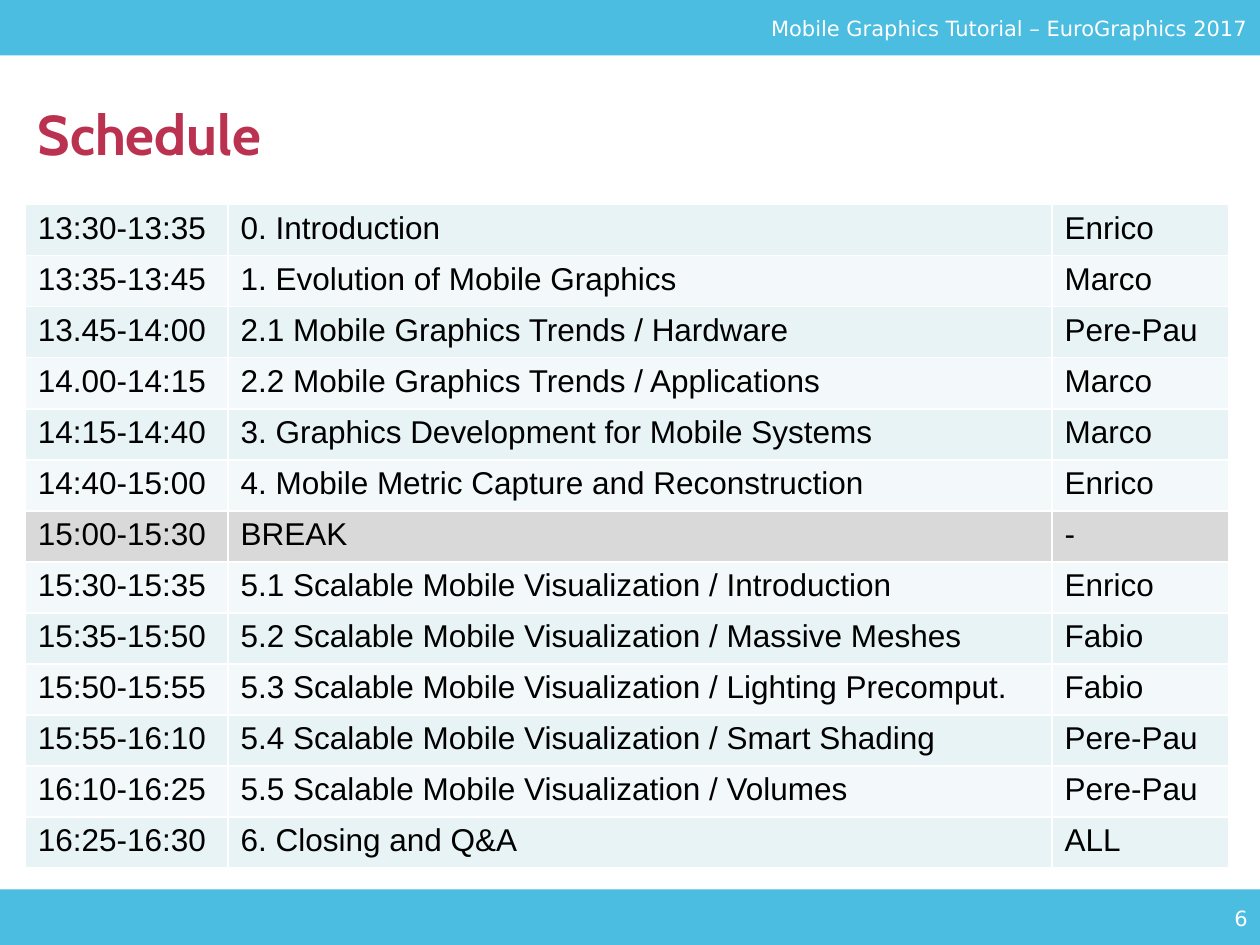
"""Build the tutorial schedule slide."""
from dataclasses import dataclass

from lxml import etree
from pptx import Presentation
from pptx.dml.color import RGBColor
from pptx.enum.shapes import MSO_SHAPE
from pptx.enum.text import MSO_ANCHOR, PP_ALIGN
from pptx.oxml.ns import qn
from pptx.util import Pt

RECTANGLE = MSO_SHAPE.RECTANGLE
TOP, MIDDLE = MSO_ANCHOR.TOP, MSO_ANCHOR.MIDDLE
LEFT, RIGHT = PP_ALIGN.LEFT, PP_ALIGN.RIGHT

SLIDE_WIDTH, SLIDE_HEIGHT = 720, 540
BAR_HEIGHT = 31.7
MARGIN = 14.4
TABLE_TOP, TABLE_HEIGHT = 116.9, 379.5
COLUMN_WIDTHS = (115.9, 470.9, 100.8)

SCHEDULE = (
    ("13:30-13:35", "0. Introduction", "Enrico"),
    ("13:35-13:45", "1. Evolution of Mobile Graphics", "Marco"),
    ("13.45-14:00", "2.1 Mobile Graphics Trends / Hardware", "Pere-Pau"),
    ("14.00-14:15", "2.2 Mobile Graphics Trends / Applications", "Marco"),
    ("14:15-14:40", "3. Graphics Development for Mobile Systems", "Marco"),
    ("14:40-15:00", "4. Mobile Metric Capture and Reconstruction", "Enrico"),
    ("15:00-15:30", "BREAK", "-"),
    ("15:30-15:35", "5.1 Scalable Mobile Visualization / Introduction", "Enrico"),
    ("15:35-15:50", "5.2 Scalable Mobile Visualization / Massive Meshes", "Fabio"),
    ("15:50-15:55", "5.3 Scalable Mobile Visualization / Lighting Precomput.", "Fabio"),
    ("15:55-16:10", "5.4 Scalable Mobile Visualization / Smart Shading", "Pere-Pau"),
    ("16:10-16:25", "5.5 Scalable Mobile Visualization / Volumes", "Pere-Pau"),
    ("16:25-16:30", "6. Closing and Q&A", "ALL"),
)


@dataclass(frozen=True)
class TextStyle:
    """Font, size, colour and weight of a piece of text."""

    font: str
    size: float
    color: str
    bold: bool = False


@dataclass(frozen=True)
class Theme:
    """Colours and text styles of the slide."""

    bar: str = "4ABDE0"
    border: str = "FFFFFF"
    row_bands: tuple = ("E7F3F4", "F3F9FA")
    break_row: str = "D9D9D9"
    title: TextStyle = TextStyle("Cabin", 32, "BA324F", True)
    body: TextStyle = TextStyle("Arial", 18, "000000")
    caption: TextStyle = TextStyle("DejaVu Sans", 12, "FFFFFF")


class SlideBuilder:
    """Draw styled elements on the current slide."""

    def __init__(self, slide, theme):
        """Keep the slide and its theme."""
        self.slide = slide
        self.theme = theme

    def fill_text(self, text_frame, text, style, alignment=LEFT):
        """Fill a text frame with one styled paragraph."""
        text_frame.text = text
        text_frame.word_wrap = True
        paragraph = text_frame.paragraphs[0]
        paragraph.alignment = alignment
        font = paragraph.runs[0].font
        font.name = style.font
        font.size = Pt(style.size)
        font.bold = style.bold
        font.color.rgb = RGBColor.from_string(style.color)

    def bar(self, top, text=None):
        """Add a full-width bar with an optional right-aligned caption."""
        shape = self.slide.shapes.add_shape(
            RECTANGLE, Pt(0), Pt(top), Pt(SLIDE_WIDTH), Pt(BAR_HEIGHT))
        shape.shadow.inherit = False
        shape.fill.solid()
        shape.fill.fore_color.rgb = RGBColor.from_string(self.theme.bar)
        shape.line.fill.background()
        if text:
            shape.text_frame.vertical_anchor = MIDDLE
            self.fill_text(shape.text_frame, text, self.theme.caption, RIGHT)

    def text(self, box, text, style, alignment=LEFT, anchor=TOP):
        """Add a text box."""
        shape = self.slide.shapes.add_textbox(*map(Pt, box))
        shape.text_frame.vertical_anchor = anchor
        self.fill_text(shape.text_frame, text, style, alignment)

    def border(self, cell):
        """Draw a thin line on every side of a cell."""
        properties = cell._tc.get_or_add_tcPr()
        for side in ("a:lnL", "a:lnR", "a:lnT", "a:lnB"):
            line = etree.SubElement(properties, qn(side), w=str(Pt(1)))
            fill = etree.SubElement(line, qn("a:solidFill"))
            etree.SubElement(fill, qn("a:srgbClr"), val=self.theme.border)

    def table(self, rows):
        """Add the schedule table with alternating bands and a marked break."""
        table = self.slide.shapes.add_table(
            len(rows), len(COLUMN_WIDTHS), Pt(MARGIN), Pt(TABLE_TOP),
            Pt(sum(COLUMN_WIDTHS)), Pt(TABLE_HEIGHT)).table
        table.first_row = table.horz_banding = False
        for column, width in zip(table.columns, COLUMN_WIDTHS):
            column.width = Pt(width)
        for index, (row, values) in enumerate(zip(table.rows, rows)):
            row.height = Pt(TABLE_HEIGHT / len(rows))
            is_break = values[1] == "BREAK"
            color = self.theme.break_row if is_break else self.theme.row_bands[index % 2]
            for cell, value in zip(row.cells, values):
                self.border(cell)
                cell.fill.solid()
                cell.fill.fore_color.rgb = RGBColor.from_string(color)
                self.fill_text(cell.text_frame, value, self.theme.body)


def main():
    """Build and save the presentation."""
    presentation = Presentation()
    presentation.slide_width = Pt(SLIDE_WIDTH)
    presentation.slide_height = Pt(SLIDE_HEIGHT)
    slide = presentation.slides.add_slide(presentation.slide_layouts[6])
    theme = Theme()
    builder = SlideBuilder(slide, theme)
    builder.bar(SLIDE_HEIGHT - BAR_HEIGHT)
    builder.bar(0, "Mobile Graphics Tutorial – EuroGraphics 2017")
    builder.text((MARGIN, 37.4, 692, 77.8), "Schedule", theme.title, anchor=MIDDLE)
    builder.table(SCHEDULE)
    builder.text((570, 514, 150, 18), "6", theme.caption, RIGHT)
    presentation.save("out.pptx")


if __name__ == "__main__":
    main()
